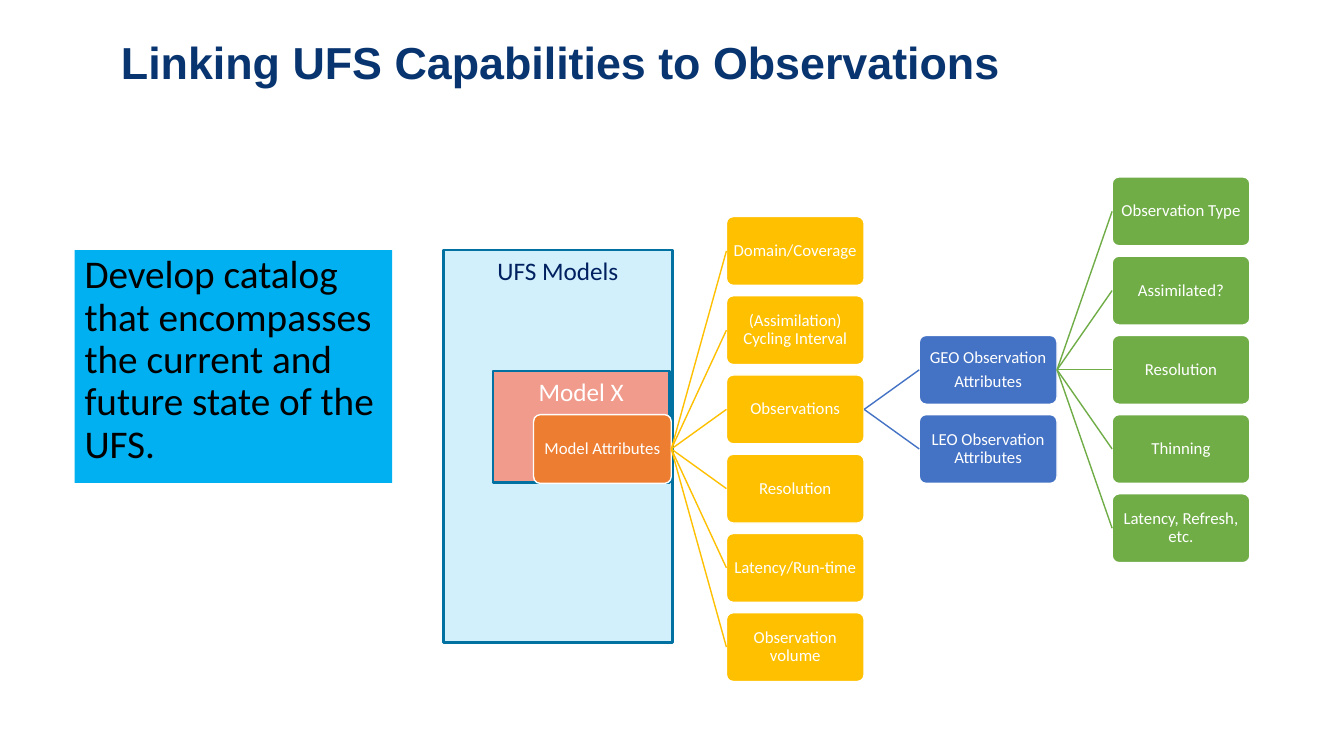
"""Build the slide that links UFS capabilities to observations."""
from dataclasses import dataclass

from lxml import etree
from pptx import Presentation, util as u
from pptx.dml.color import RGBColor
from pptx.enum import shapes, text
from pptx.oxml import ns

COLORS = {
    "navy": "083470", "ink": "002060", "black": "000000", "white": "FFFFFF",
    "sky": "00B0F0", "edge": "0071A0", "salmon": "F09B8C",
    "orange": "ED7D31", "gold": "FFC000", "blue": "4472C4", "green": "70AD47",
}
WIDTH, HEIGHT = u.Inches(13.33), u.Inches(7.5)
TREE_LEFT, TREE_TOP = 39.7, 23.4
COLUMN_STEP, HALF_ROW = 14.35, 5.24
NODE_WIDTH, NODE_HEIGHT = 10.25, 9.11


@dataclass(frozen=True)
class Area:
    """A rectangle in percent of the slide's width and height."""
    left: float
    top: float
    width: float
    height: float

    def emu(self) -> tuple[int, int, int, int]:
        """Return left, top, width and height in EMU."""
        return (round(WIDTH * self.left / 100), round(HEIGHT * self.top / 100),
                round(WIDTH * self.width / 100), round(HEIGHT * self.height / 100))


@dataclass(frozen=True)
class Panel:
    """A plain rectangle with text at its top."""
    label: str
    area: Area
    fill: str
    ink: str
    size: float = 18
    edge: str | None = "edge"
    align: text.PP_ALIGN = text.PP_ALIGN.CENTER
    spacing: float = 1.0
    opacity: int = 100


@dataclass(frozen=True)
class Node:
    """A box of the tree, placed by its half-row."""
    label: str
    color: str
    row: int
    children: tuple["Node", ...] = ()


def branch(color: str, first_row: int, *labels: str) -> tuple[Node, ...]:
    """Stack childless nodes two half-rows apart."""
    return tuple(Node(label, color, first_row + 2 * i) for i, label in enumerate(labels))


GEO = Node("GEO Observation\nAttributes", "blue", 4, branch(
    "green", 0, "Observation Type", "Assimilated?", "Resolution", "Thinning",
    "Latency, Refresh, etc."))
LEO = Node("LEO Observation Attributes", "blue", 6)
ATTRIBUTES = Node("Model Attributes", "orange", 6, (
    *branch("gold", 1, "Domain/Coverage", "(Assimilation) Cycling Interval"),
    Node("Observations", "gold", 5, (GEO, LEO)),
    *branch("gold", 7, "Resolution", "Latency/Run-time", "Observation volume"),
))
MODEL_PANELS = (
    Panel("UFS Models", Area(33, 33.07, 17.03, 51.87), "sky", "ink", opacity=18),
    Panel("Model X", Area(36.68, 49.07, 13.13, 14.8), "salmon", "white"),
)
CATALOG = Panel(
    "Develop catalog that encompasses the current and future state of the UFS.",
    Area(5.55, 33.07, 23.63, 30.8), "sky", "black", size=28, edge=None,
    align=text.PP_ALIGN.LEFT, spacing=0.9)


def rgb(color: str) -> RGBColor:
    """Look a colour up by name."""
    return RGBColor.from_string(COLORS[color])


def write(frame, content: str, *, size: float, color: str, font: str = "Calibri",
          bold: bool = False, align=text.PP_ALIGN.CENTER, anchor=text.MSO_ANCHOR.TOP,
          spacing: float = 1.0, after: float = 0, inset: float | None = None) -> None:
    """Fill a text frame with one paragraph per line of content."""
    frame.word_wrap = True
    frame.auto_size = text.MSO_AUTO_SIZE.NONE
    frame.vertical_anchor = anchor
    if inset is not None:
        frame.margin_left = frame.margin_right = u.Inches(inset)
        frame.margin_top = frame.margin_bottom = u.Inches(inset)
    for i, line in enumerate(content.split("\n")):
        paragraph = frame.add_paragraph() if i else frame.paragraphs[0]
        paragraph.alignment = align
        paragraph.line_spacing = spacing
        paragraph.space_before, paragraph.space_after = u.Pt(0), u.Pt(after)
        run = paragraph.add_run()
        run.text = line
        run.font.name, run.font.size, run.font.bold = font, u.Pt(size), bold
        run.font.color.rgb = rgb(color)


def add_block(slide, preset, area: Area, fill: str, edge: str | None, weight: float):
    """Add a filled shape without shadow."""
    block = slide.shapes.add_shape(preset, *area.emu())
    block.shadow.inherit = False
    block.fill.solid()
    block.fill.fore_color.rgb = rgb(fill)
    if edge:
        block.line.color.rgb = rgb(edge)
        block.line.width = u.Pt(weight)
    else:
        block.line.fill.background()
    return block


def draw_panel(slide, panel: Panel) -> None:
    """Draw a rectangle with its text."""
    block = add_block(slide, shapes.MSO_SHAPE.RECTANGLE, panel.area, panel.fill, panel.edge, 2)
    if panel.opacity < 100:
        tint = block.fill._xPr.find(ns.qn("a:solidFill"))[0]
        etree.SubElement(tint, ns.qn("a:alpha"), val=str(panel.opacity * 1000))
    write(block.text_frame, panel.label, size=panel.size, color=panel.ink,
          align=panel.align, spacing=panel.spacing)


def draw_link(slide, parent, child, color: str) -> None:
    """Join the right side of a parent to the left side of its child."""
    link = slide.shapes.add_connector(shapes.MSO_CONNECTOR.STRAIGHT, 0, 0, 0, 0)
    link.begin_connect(parent, 3)
    link.end_connect(child, 1)
    link.line.color.rgb = rgb(color)
    link.line.width = u.Pt(1)
    etree.SubElement(link._element.spPr, ns.qn("a:effectLst"))


def draw_tree(slide, node: Node, column: int = 0):
    """Draw a node, its descendants and the links between them."""
    area = Area(TREE_LEFT + COLUMN_STEP * column, TREE_TOP + HALF_ROW * node.row,
                NODE_WIDTH, NODE_HEIGHT)
    block = add_block(slide, shapes.MSO_SHAPE.ROUNDED_RECTANGLE, area, node.color, "white", 1)
    block.adjustments[0] = 0.1
    write(block.text_frame, node.label, size=12, color="white", spacing=0.9, after=4.2,
          anchor=text.MSO_ANCHOR.MIDDLE, inset=0.03)
    for child in node.children:
        draw_link(slide, block, draw_tree(slide, child, column + 1), child.color)
    return block


def main() -> None:
    """Compose and save the slide."""
    deck = Presentation()
    deck.slide_width, deck.slide_height = WIDTH, HEIGHT
    slide = deck.slides.add_slide(deck.slide_layouts[5])
    title = slide.shapes.title
    title.left, title.top, title.width, title.height = Area(8.25, 4, 70.14, 8.27).emu()
    write(title.text_frame, "Linking UFS Capabilities to Observations", size=32,
          color="navy", font="Arial", bold=True, align=text.PP_ALIGN.LEFT,
          anchor=text.MSO_ANCHOR.MIDDLE)
    for panel in MODEL_PANELS:
        draw_panel(slide, panel)
    draw_tree(slide, ATTRIBUTES)
    draw_panel(slide, CATALOG)
    deck.save("out.pptx")


if __name__ == "__main__":
    main()
